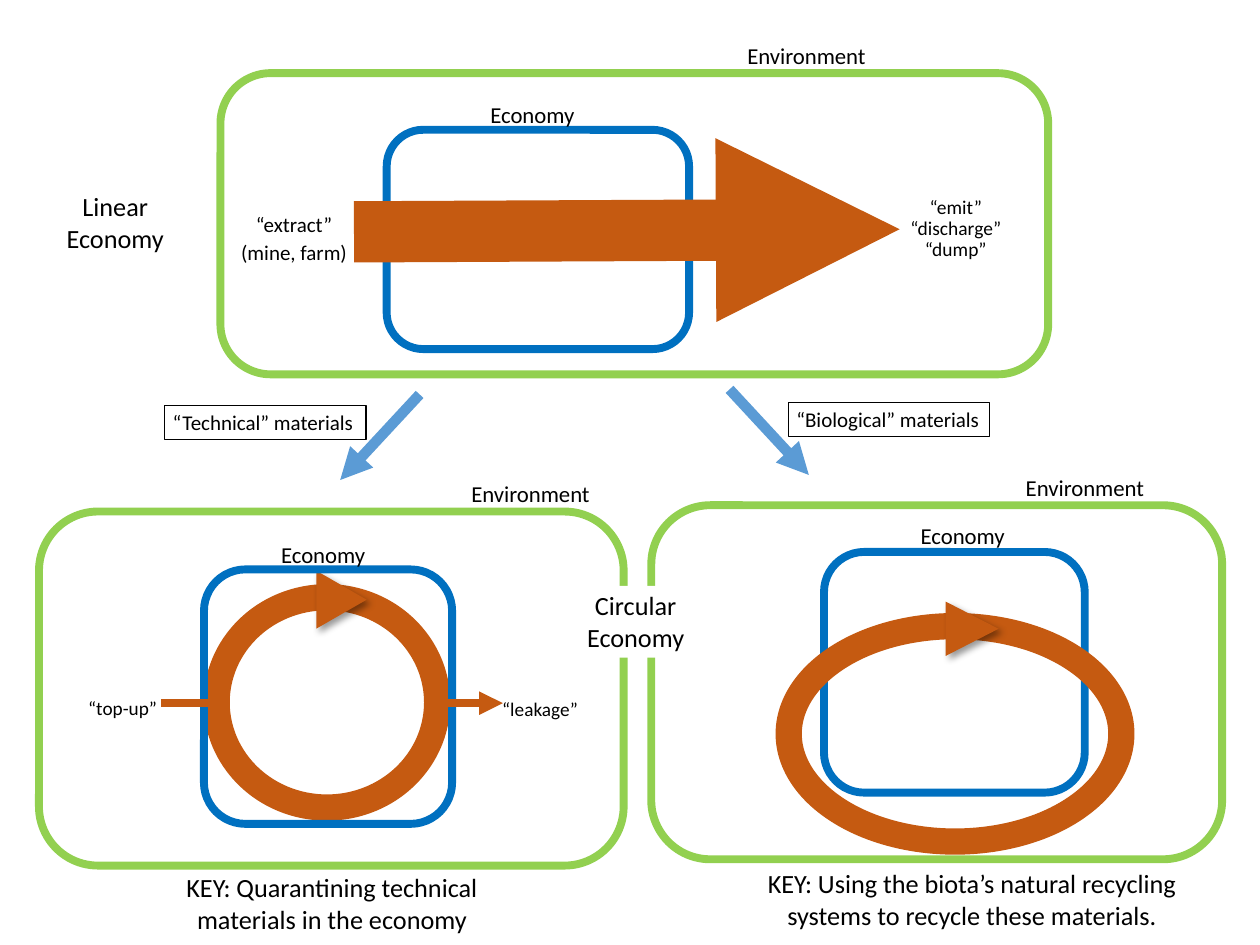
"""Build the slide comparing a linear economy with a circular one."""
from lxml.etree import SubElement
from pptx import Presentation
from pptx.dml.color import RGBColor
from pptx.enum.shapes import MSO_CONNECTOR, MSO_SHAPE
from pptx.enum.text import MSO_ANCHOR, PP_ALIGN
from pptx.oxml.ns import qn
from pptx.util import Pt

GREEN = RGBColor(0x92, 0xD0, 0x50)
BLUE = RGBColor(0x00, 0x70, 0xC0)
SKY = RGBColor(0x5B, 0x9B, 0xD5)
RUST = RGBColor(0xC5, 0x5A, 0x11)
WHITE = RGBColor(0xFF, 0xFF, 0xFF)
BLACK = RGBColor(0x00, 0x00, 0x00)
WIDE, SNUG, TAG, LOOSE = (5, 3), (3, 1.4), (4.5, 2), (7.2, 3.6)


def add_form(slide, kind, box, fill=None, line=None, width=4.5):
    form = slide.shapes.add_shape(kind, *map(Pt, box))
    form.shadow.inherit = False
    if fill is None:
        form.fill.background()
    else:
        form.fill.solid()
        form.fill.fore_color.rgb = fill
    if line is None:
        form.line.fill.background()
    else:
        form.line.color.rgb = line
        form.line.width = Pt(width)
    return form


def add_frame(slide, box, color, fill=None):
    add_form(slide, MSO_SHAPE.ROUNDED_RECTANGLE, box, fill, color)


def add_loop(slide, ring, head):
    add_form(slide, MSO_SHAPE.OVAL, ring, line=RUST, width=15)
    tip = add_form(slide, MSO_SHAPE.ISOSCELES_TRIANGLE, head, RUST)
    tip.rotation = 90
    effects = tip._element.spPr.find(qn("a:effectLst"))
    shade = SubElement(effects, qn("a:outerShdw"), blurRad=str(Pt(4)),
                       dist=str(Pt(3)), dir="2700000", rotWithShape="0")
    color = SubElement(shade, qn("a:srgbClr"), val="000000")
    SubElement(color, qn("a:alpha"), val="40000")


def add_line(slide, start, end, color, width, arrow=True):
    line = slide.shapes.add_connector(
        MSO_CONNECTOR.STRAIGHT, *map(Pt, start + end))
    line.line.color.rgb = color
    line.line.width = Pt(width)
    if arrow:
        SubElement(line.line._get_or_add_ln(), qn("a:tailEnd"), type="triangle")
    SubElement(line._element.spPr, qn("a:effectLst"))


def set_text(shape, text, size, inset, align, space):
    frame = shape.text_frame
    frame.word_wrap = True
    frame.vertical_anchor = MSO_ANCHOR.TOP
    frame.margin_left = frame.margin_right = Pt(inset[0])
    frame.margin_top = frame.margin_bottom = Pt(inset[1])
    frame.text = text
    for para in frame.paragraphs:
        para.alignment = align
        para.line_spacing = space
        for run in para.runs:
            run.font.name = "Calibri"
            run.font.size = Pt(size)
            run.font.color.rgb = BLACK


def add_text(slide, text, box, size=13, inset=WIDE, align=PP_ALIGN.CENTER, space=1.1):
    set_text(slide.shapes.add_textbox(*map(Pt, box)), text, size, inset, align, space)


def add_label(slide, text, box, size=15, inset=TAG, align=PP_ALIGN.CENTER,
              space=1.0, line=None):
    form = add_form(slide, MSO_SHAPE.RECTANGLE, box, WHITE, line, 0.75)
    set_text(form, text, size, inset, align, space)


def draw_tech(slide):
    add_loop(slide, (123.8, 341.3, 126, 120.2), (178.6, 328.3, 33.1, 28.8))
    add_frame(slide, (116.6, 325.4, 141.8, 145.4), BLUE)
    add_line(slide, (120.2, 401.8), (92.2, 401.8), RUST, 4.5, arrow=False)
    add_line(slide, (254.2, 401.8), (287.3, 401.8), RUST, 4.5)
    add_text(slide, "Economy", (149, 304.2, 71.3, 18.7))
    add_text(slide, "“top-up”", (26.4, 393.4, 68.4, 20.9), 11, align=PP_ALIGN.RIGHT)
    add_text(slide, "“leakage”", (282, 394.2, 70.6, 19.4), 11, align=PP_ALIGN.LEFT)
    add_text(slide, "Environment", (247.7, 269.6, 110.9, 34.6))
    add_frame(slide, (22.3, 292.3, 334.1, 202.3), GREEN)


def draw_bio(slide):
    add_text(slide, "Environment", (562.3, 266.4, 115.2, 33.1))
    add_frame(slide, (470.9, 315.4, 149, 137.5), BLUE)
    add_loop(slide, (450.7, 357.8, 190.1, 123.1), (540, 344.2, 31, 30.2))
    add_text(slide, "Economy", (513.4, 293.8, 73.4, 18))
    add_frame(slide, (372.2, 288.7, 326.2, 202.3), GREEN)


def draw_linear(slide):
    add_frame(slide, (126, 41.8, 473, 172.1), GREEN)
    add_frame(slide, (221, 74.2, 172.8, 125.3), BLUE, WHITE)
    add_line(slide, (202.3, 132.5), (514.1, 131), RUST, 35)
    add_label(slide, "Economy", (234, 54.7, 140.4, 14.4), 13, SNUG, space=1.1)
    add_text(slide, "Environment", (416.9, 20.9, 87.8, 25.2), inset=SNUG)
    add_text(slide, "“extract”\n(mine, farm)", (131, 118.1, 74.2, 31), 12, SNUG)
    add_text(slide, "“emit”\n“discharge”\n“dump”", (499, 111.6, 94.3, 41),
             11.1, SNUG, space=0.9)


def draw_notes(slide):
    add_line(slide, (239.8, 225.4), (194.4, 274.3), SKY, 6)
    add_line(slide, (416.9, 222.5), (462.2, 271.4), SKY, 6)
    for text, left, top in (("“Technical” materials", 94.2, 231.8),
                            ("“Biological” materials", 450.5, 230.2)):
        add_label(slide, text, (left, top, 115, 19.4), 12,
                  align=PP_ALIGN.LEFT, line=BLACK)
    add_label(slide, "Linear\nEconomy", (8.6, 106.9, 114.5, 41))
    add_label(slide, "Circular Economy", (316.1, 334.8, 94.3, 41))
    add_text(slide, "KEY: Quarantining technical materials in the economy",
             (90.7, 494.6, 198, 43.9), 15, LOOSE, space=1.0)
    add_text(slide, "KEY: Using the biota’s natural recycling systems to recycle "
             "these materials.", (429.1, 492.2, 252.7, 43.9), 15, LOOSE, space=1.0)


def main():
    deck = Presentation()
    deck.slide_width, deck.slide_height = Pt(720), Pt(540)
    slide = deck.slides.add_slide(deck.slide_layouts[6])
    for draw in (draw_tech, draw_bio, draw_linear, draw_notes):
        draw(slide)
    deck.save("out.pptx")


if __name__ == "__main__":
    main()
